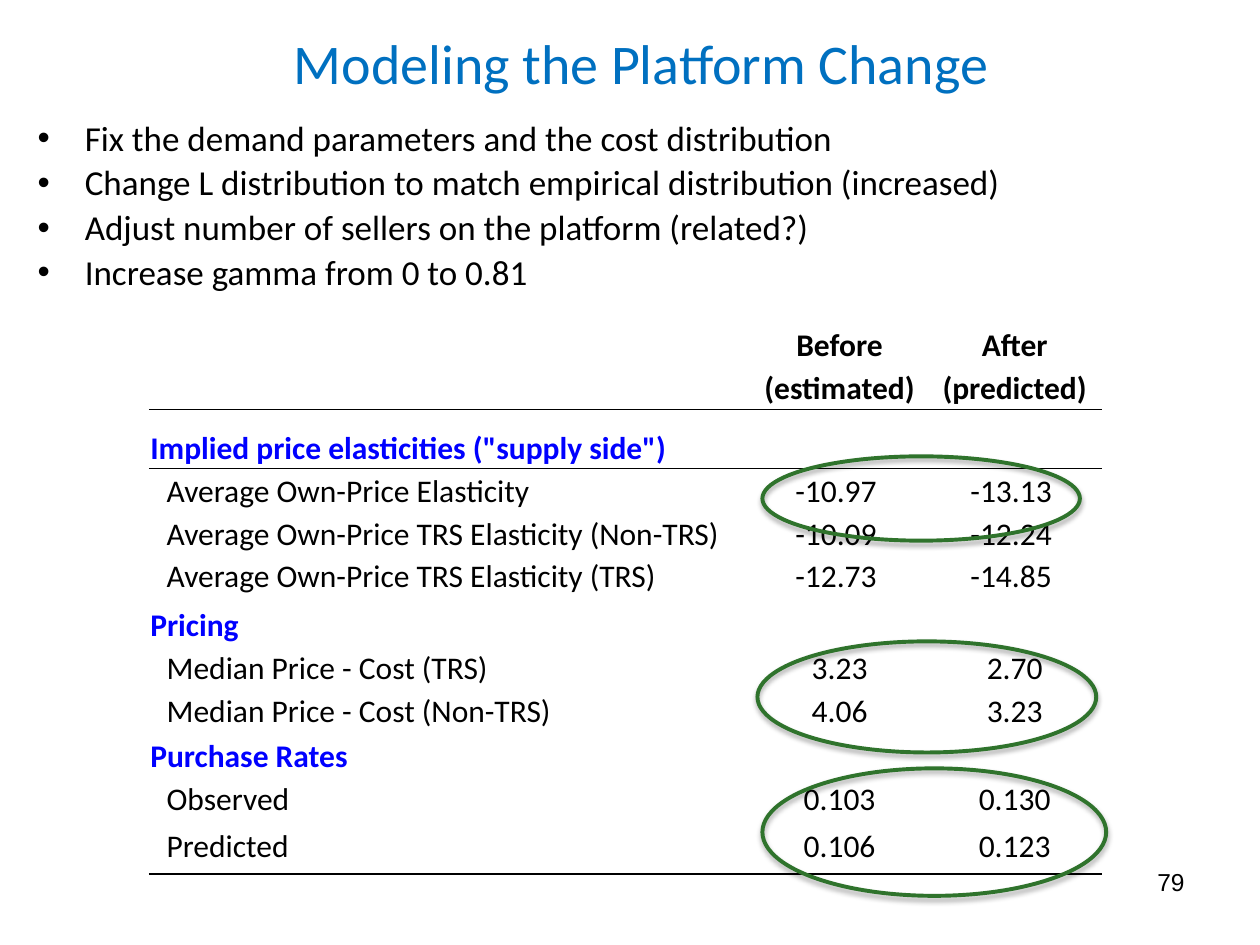
from lxml.etree import SubElement
from pptx import Presentation
from pptx.dml.color import RGBColor
from pptx.enum.shapes import MSO_SHAPE
from pptx.enum.text import MSO_ANCHOR, PP_ALIGN
from pptx.oxml import parse_xml
from pptx.oxml.ns import nsdecls, qn
from pptx.util import Cm, Pt

HUES = {"title": "0070C0", "text": "000000", "head": "0000FF", "ring": "2F732C"}
PLAIN = "{2D5ABB26-0587-4C30-8999-92F81FD0307C}"
POINTS = [
    "Fix the demand parameters and the cost distribution",
    "Change L distribution to match empirical distribution (increased)",
    "Adjust number of sellers on the platform (related?)",
    "Increase gamma from 0 to 0.81",
]
WIDTHS = [0.33, 0.76, 11.07, 3.53, 3.53]
ROWS = [
    ("top", 0.86, "", "Before", "After"),
    ("top", 0.86, "", "(estimated)", "(predicted)"),
    ("head", 1.19, 'Implied price elasticities ("supply side")', "", ""),
    ("item", 0.86, "Average Own-Price Elasticity", "-10.97 ", "-13.13 "),
    ("item", 0.86, "Average Own-Price TRS Elasticity (Non-TRS)", "-10.09 ", "-12.24 "),
    ("item", 0.86, "Average Own-Price TRS Elasticity (TRS)", "-12.73 ", "-14.85 "),
    ("head", 0.99, "Pricing", "", ""),
    ("item", 0.86, "Median Price - Cost (TRS)", "3.23", "2.70"),
    ("item", 0.86, "Median Price - Cost (Non-TRS)", "4.06", "3.23"),
    ("head", 0.91, "Purchase Rates", "", ""),
    ("item", 0.86, "Observed", "0.103", "0.130"),
    ("last", 1.12, "Predicted", "0.106", "0.123"),
]
SPANS = {"top": (0, 1), "head": (0, 2), "item": (1, 2), "last": (1, 2)}
EDGES = {1: "lnB", 2: "lnT", len(ROWS) - 1: "lnB"}
RINGS = [
    (15.37, 9.2, 6.4, 1.7),
    (15.27, 12.93, 6.83, 2.24),
    (15.37, 15.49, 6.93, 2.57),
]


class Deck:
    """Hold the style and the current slide."""

    def __init__(self, slide, font="Calibri"):
        self.slide = slide
        self.font = font

    def run(self, par, text, size, hue="text", bold=False, font=None):
        run = par.add_run()
        run.text = text
        run.font.size = Pt(size)
        run.font.bold = bold
        run.font.name = font or self.font
        run.font.color.rgb = RGBColor.from_string(HUES[hue])

    def box(self, place, anchor=MSO_ANCHOR.TOP):
        shape = self.slide.shapes.add_textbox(*map(Cm, place))
        frame = shape.text_frame
        frame.word_wrap = True
        frame.vertical_anchor = anchor
        return frame

    def line(self, place, text, size, align, anchor=MSO_ANCHOR.TOP, **style):
        par = self.box(place, anchor).paragraphs[0]
        par.alignment = align
        self.run(par, text, size, **style)

    def list(self, place, items, size):
        frame = self.box(place)
        for num, item in enumerate(items):
            par = frame.add_paragraph() if num else frame.paragraphs[0]
            par.line_spacing = 0.9
            par.space_before = Pt(size * 0.2)
            self.run(par, item, size)
            props = par._p.get_or_add_pPr()
            props.set("marL", str(Cm(0.95)))
            props.set("indent", str(Cm(-0.95)))
            SubElement(props, qn("a:buFont"), typeface="Arial")
            SubElement(props, qn("a:buChar"), char="•")

    def cell(self, cell, text, kind, align):
        cell.margin_left = cell.margin_right = cell.margin_top = Cm(0.03)
        cell.margin_bottom = 0
        cell.fill.background()
        middle = kind in ("top", "last")
        cell.vertical_anchor = MSO_ANCHOR.MIDDLE if middle else MSO_ANCHOR.BOTTOM
        par = cell.text_frame.paragraphs[0]
        par.alignment = align
        par.font.size = Pt(18)
        if text:
            hue = "head" if kind == "head" else "text"
            self.run(par, text, 18, hue, kind in ("top", "head"))

    def edge(self, cell, side):
        cell._tc.get_or_add_tcPr().insert(0, parse_xml(
            f'<a:{side} {nsdecls("a")} w="{Pt(1)}"><a:solidFill>'
            f'<a:srgbClr val="{HUES["text"]}"/></a:solidFill></a:{side}>'))

    def table(self, left, top, widths, rows):
        high = sum(row[1] for row in rows)
        place = map(Cm, (left, top, sum(widths), high))
        frame = self.slide.shapes.add_table(len(rows), len(widths), *place)
        grid = frame.table
        grid.first_row = grid.horz_banding = False
        for style in frame.element.iter(qn("a:tableStyleId")):
            style.text = PLAIN
        for col, wide in zip(grid.columns, widths):
            col.width = Cm(wide)
        for num, (kind, tall, name, *vals) in enumerate(rows):
            grid.rows[num].height = Cm(tall)
            start, stop = SPANS[kind]
            texts = {start: name, 3: vals[0], 4: vals[1]}
            for col in range(len(widths)):
                cell = grid.cell(num, col)
                align = PP_ALIGN.CENTER if col > 2 else PP_ALIGN.LEFT
                self.cell(cell, texts.get(col, ""), kind, align)
                if num in EDGES:
                    self.edge(cell, EDGES[num])
            grid.cell(num, start).merge(grid.cell(num, stop))

    def ring(self, place):
        shape = self.slide.shapes.add_shape(MSO_SHAPE.OVAL, *map(Cm, place))
        shape.fill.background()
        shape.line.color.rgb = RGBColor.from_string(HUES["ring"])
        shape.line.width = Pt(2.25)
        shape.shadow.inherit = False
        glow = SubElement(
            shape.element.spPr.find(qn("a:effectLst")), qn("a:outerShdw"),
            blurRad=str(Pt(3.1)), dist=str(Pt(1.8)), dir="5400000", rotWithShape="0")
        tint = SubElement(glow, qn("a:srgbClr"), val=HUES["text"])
        SubElement(tint, qn("a:alpha"), val="35000")


def main():
    show = Presentation()
    show.slide_width, show.slide_height = Cm(25.4), Cm(19.05)
    deck = Deck(show.slides.add_slide(show.slide_layouts[6]))
    deck.line((1.5, 0, 22.86, 2.51), "Modeling the Platform Change", 32,
              PP_ALIGN.CENTER, MSO_ANCHOR.MIDDLE, hue="title")
    deck.line((18.21, 17.35, 5.92, 1.32), "79", 14, PP_ALIGN.RIGHT, font="Arial")
    deck.table(3, 6.53, WIDTHS, ROWS)
    deck.list((0.51, 2.31, 24.41, 3.89), POINTS, 20)
    for place in RINGS:
        deck.ring(place)
    show.save("out.pptx")


if __name__ == "__main__":
    main()
